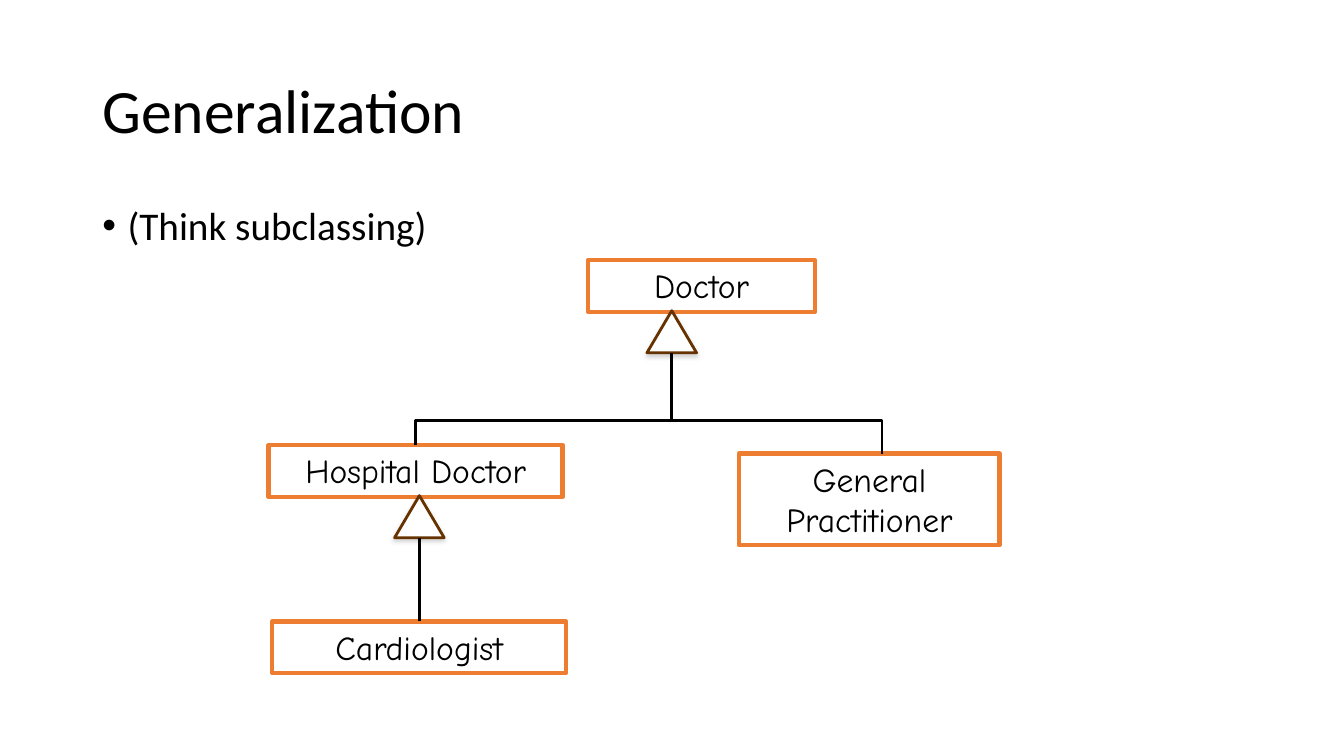
from dataclasses import dataclass

from lxml import etree
from pptx import Presentation
from pptx import util as u
from pptx.dml.color import RGBColor
from pptx.enum import shapes, text
from pptx.oxml import parse_xml
from pptx.oxml.ns import nsdecls, qn


@dataclass(frozen=True)
class Theme:
    ink: str = "000000"
    paper: str = "FFFFFF"
    box: str = "ED7D31"
    arrow: str = "663300"
    shade: str = "808080"
    font: str = "Calibri"
    label: str = "Comic Neue"
    large: int = 44
    body: int = 28
    small: int = 24


def write(frame, words, size, font, color, align=text.PP_ALIGN.LEFT,
          anchor=text.MSO_ANCHOR.TOP, fit=text.MSO_AUTO_SIZE.NONE,
          spacing=None, before=0):
    frame.word_wrap = True
    frame.auto_size = fit
    frame.vertical_anchor = anchor
    para = frame.paragraphs[0]
    para.alignment = align
    para.line_spacing = spacing
    para.space_before = u.Pt(before)
    run = para.add_run()
    run.text = words
    run.font.size = u.Pt(size)
    run.font.name = font
    run.font.color.rgb = RGBColor.from_string(color)
    return para


class Deck:
    def __init__(self, theme):
        self.theme = theme
        self.file = Presentation()
        self.file.slide_width = u.Cm(33.87)
        self.file.slide_height = u.Cm(19.05)
        self.slide = self.file.slides.add_slide(self.file.slide_layouts[5])
        self.items = self.slide.shapes

    def title(self, words, *area):
        head = self.items.title
        head.left, head.top, head.width, head.height = map(u.Cm, area)
        write(head.text_frame, words, self.theme.large, self.theme.font,
              self.theme.ink, anchor=text.MSO_ANCHOR.MIDDLE, spacing=0.9)

    def bullet(self, words, *area):
        frame = self.items.add_textbox(*map(u.Cm, area)).text_frame
        para = write(frame, words, self.theme.body, self.theme.font,
                     self.theme.ink, spacing=0.9, before=10)
        props = para._p.get_or_add_pPr()
        indent = u.Pt(18)
        props.set("marL", str(indent))
        props.set("indent", str(-indent))
        etree.SubElement(props, qn("a:buFont")).set("typeface", "Arial")
        etree.SubElement(props, qn("a:buChar")).set("char", "•")

    def stroke(self, item, color, width):
        item.line.color.rgb = RGBColor.from_string(color)
        item.line.width = u.Pt(width)

    def node(self, words, x, y, w, h=1.3):
        box = self.items.add_shape(shapes.MSO_SHAPE.RECTANGLE,
                                   *map(u.Cm, (x, y, w, h)))
        box.shadow.inherit = False
        box.fill.background()
        self.stroke(box, self.theme.box, 3)
        write(box.text_frame, words, self.theme.small, self.theme.label,
              self.theme.ink, align=text.PP_ALIGN.CENTER,
              fit=text.MSO_AUTO_SIZE.SHAPE_TO_FIT_TEXT)

    def head(self, x, y, w=1.25, h=1.06):
        """Draw a hollow arrowhead with its tip at x, y."""
        tip = self.items.add_shape(shapes.MSO_SHAPE.ISOSCELES_TRIANGLE,
                                   *map(u.Cm, (x - w / 2, y, w, h)))
        tip.fill.solid()
        tip.fill.fore_color.rgb = RGBColor.from_string(self.theme.paper)
        self.stroke(tip, self.theme.arrow, 2)
        tip._element.spPr.append(parse_xml(
            f'<a:effectLst {nsdecls("a")}><a:outerShdw blurRad="{u.Pt(3.1)}" '
            f'dist="{u.Pt(1.8)}" dir="5400000" rotWithShape="0">'
            f'<a:srgbClr val="{self.theme.shade}"><a:alpha val="35000"/>'
            '</a:srgbClr></a:outerShdw></a:effectLst>'))

    def link(self, x1, y1, x2, y2, kind=shapes.MSO_CONNECTOR.STRAIGHT):
        line = self.items.add_connector(kind, *map(u.Cm, (x1, y1, x2, y2)))
        self.stroke(line, self.theme.ink, 2)
        etree.SubElement(line._element.spPr, qn("a:effectLst"))
        return line

    def fork(self, x1, y1, x2, y2, rise):
        """Join two box tops by an elbow that climbs above the first."""
        w, h = y2 - y1, x2 - x1
        x, y = (x1 + x2 - w) / 2, (y1 + y2 - h) / 2
        line = self.link(x, y, x + w, y + h, shapes.MSO_CONNECTOR.ELBOW)
        # A quarter turn and a flip make the elbow leave upwards
        props = line._element.spPr
        frame = props.find(qn("a:xfrm"))
        frame.set("rot", "16200000")
        frame.set("flipH", "1")
        geom = props.find(qn("a:prstGeom"))
        geom.set("prst", "bentConnector4")
        guides = geom.find(qn("a:avLst"))
        for name, share in (("adj1", -rise / w), ("adj2", 1)):
            guide = etree.SubElement(guides, qn("a:gd"))
            guide.set("name", name)
            guide.set("fmla", f"val {round(share * 100000)}")


def main():
    deck = Deck(Theme())

    # Heading and remark
    deck.title("Generalization", 2.33, 1.01, 29.21, 3.68)
    deck.bullet("(Think subclassing)", 2.33, 5.07, 29.21, 12.09)

    # Classes
    deck.node("Hospital Doctor", 6.77, 11.22, 7.41)
    deck.node("Doctor", 14.82, 6.56, 5.72)
    deck.node("General Practitioner", 18.63, 11.43, 6.56, 2.31)
    deck.node("Cardiologist", 6.86, 15.66, 7.41)

    # Inheritance arrows
    for x, tip, end in ((16.93, 7.83, 10.59), (10.57, 12.49, 15.66)):
        deck.head(x, tip)
        deck.link(x, end, x, tip + 1.06)
    deck.fork(10.48, 11.22, 22.23, 11.43, rise=0.63)

    deck.file.save("out.pptx")


if __name__ == "__main__":
    main()
